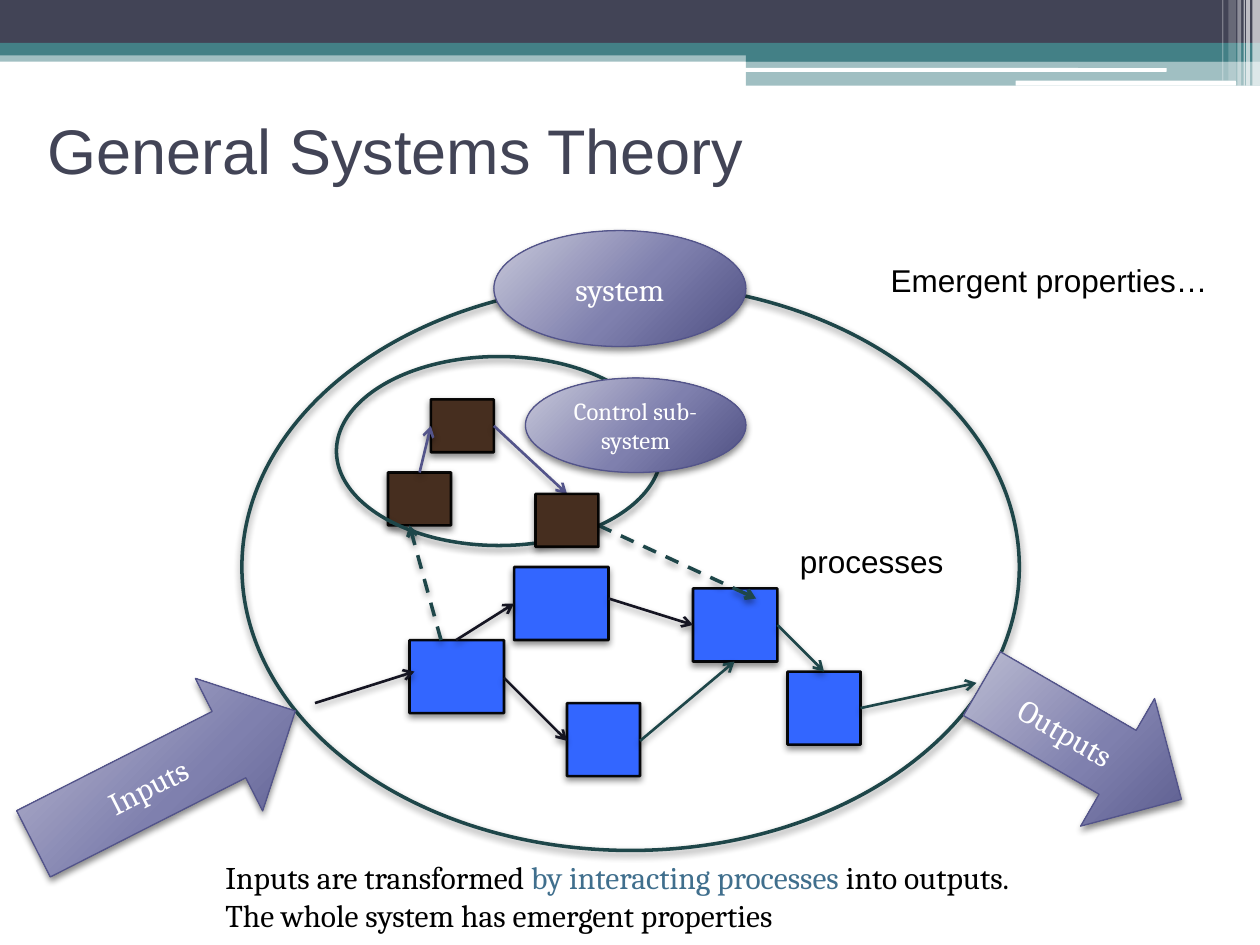
import pptx
import pptx.util
import pptx.oxml
import pptx.oxml.ns
from pptx.dml.color import RGBColor
from pptx.enum.dml import MSO_LINE
from pptx.enum.shapes import MSO_CONNECTOR, MSO_SHAPE
from pptx.enum.text import MSO_ANCHOR, MSO_AUTO_SIZE, PP_ALIGN
from pptx.util import Inches

SLATE = RGBColor(0x42, 0x44, 0x56)
TEAL = RGBColor(0x43, 0x80, 0x86)
DARK_TEAL = RGBColor(0x1E, 0x46, 0x49)
VIOLET = RGBColor(0x53, 0x54, 0x8A)
INK = RGBColor(0x15, 0x15, 0x22)
BLUE = RGBColor(0x33, 0x66, 0xFF)
BROWN = RGBColor(0x46, 0x2E, 0x1F)
STEEL = RGBColor(0x40, 0x6F, 0x8D)
BLACK = RGBColor(0, 0, 0)
WHITE = RGBColor(0xFF, 0xFF, 0xFF)

NS = pptx.oxml.ns.nsdecls("a")
GRADIENT = f"""<a:gradFill {NS} rotWithShape="1"><a:gsLst>
<a:gs pos="0"><a:srgbClr val="C9C9DA"/></a:gs>
<a:gs pos="55000"><a:srgbClr val="7F80AE"/></a:gs>
<a:gs pos="100000"><a:srgbClr val="4D4E81"/></a:gs></a:gsLst>
<a:path path="circle"><a:fillToRect l="-40000" t="-90000" r="140000" b="190000"/></a:path>
</a:gradFill>"""


def box(left, top, width, height):
    return Inches(left), Inches(top), Inches(width), Inches(height)


def write(frame, paragraphs, size=18, font="Cambria", color=BLACK, align=None, anchor=None):
    """Fill a text frame; each paragraph is a list of (text, colour or None)."""
    if anchor is not None:
        frame.vertical_anchor = anchor
    for index, parts in enumerate(paragraphs):
        paragraph = frame.paragraphs[0] if index == 0 else frame.add_paragraph()
        paragraph.alignment = align
        for text, part_color in parts:
            run = paragraph.add_run()
            run.text = text
            run.font.size = pptx.util.Pt(size)
            run.font.name = font
            run.font.color.rgb = part_color or color


def set_alpha(parent, percent):
    color = parent.find(".//" + pptx.oxml.ns.qn("a:srgbClr"))
    color.append(pptx.oxml.parse_xml(f'<a:alpha {NS} val="{percent * 1000}"/>'))


def add_shadow(properties, percent):
    properties.append(pptx.oxml.parse_xml(
        f'<a:effectLst {NS}><a:outerShdw blurRad="50800" dist="25400" dir="5400000" '
        f'rotWithShape="0"><a:srgbClr val="000000"><a:alpha val="{percent * 1000}"/>'
        '</a:srgbClr></a:outerShdw></a:effectLst>'))


class Diagram:
    """Style of the systems diagram and the slide it is drawn on."""

    def __init__(self, slide):
        self.slide = slide
        self.shapes = slide.shapes

    def title(self, text, *place):
        heading = self.shapes.title
        heading.left, heading.top, heading.width, heading.height = box(*place)
        write(heading.text_frame, [[(text, None)]], size=36, font="Arial", color=SLATE,
              align=PP_ALIGN.LEFT, anchor=MSO_ANCHOR.MIDDLE)

    def bar(self, place, color, alpha=None, kind=MSO_SHAPE.RECTANGLE):
        strip = self.shapes.add_shape(kind, *box(*place))
        strip.fill.solid()
        strip.fill.fore_color.rgb = color
        if alpha:
            set_alpha(strip._element.spPr, alpha)
        strip.line.fill.background()
        strip.shadow.inherit = False

    def outlined(self, kind, place, color, width):
        shape = self.shapes.add_shape(kind, *box(*place))
        shape.line.color.rgb = color
        shape.line.width = pptx.util.Pt(width)
        add_shadow(shape._element.spPr, 45)
        return shape

    def boundary(self, *place):
        self.outlined(MSO_SHAPE.OVAL, place, DARK_TEAL, 2).fill.background()

    def process(self, color, *place):
        step = self.outlined(MSO_SHAPE.RECTANGLE, place, BLACK, 1.5)
        step.fill.solid()
        step.fill.fore_color.rgb = color
        set_alpha(step.line._get_or_add_ln(), 95)

    def label(self, text, kind, place, size=18, rotation=0):
        badge = self.outlined(kind, place, VIOLET, 0.75)
        badge.fill.solid()
        properties = badge._element.spPr
        properties.replace(properties.find(pptx.oxml.ns.qn("a:solidFill")),
                           pptx.oxml.parse_xml(GRADIENT))
        badge.rotation = rotation
        write(badge.text_frame, [[(text, None)]], size=size, color=WHITE,
              align=PP_ALIGN.CENTER, anchor=MSO_ANCHOR.MIDDLE)

    def arrow(self, start, end, color, dashed=False):
        flow = self.shapes.add_connector(
            MSO_CONNECTOR.STRAIGHT, *(Inches(value) for value in (*start, *end)))
        flow.line.color.rgb = color
        flow.line.width = pptx.util.Pt(2 if dashed else 1.5)
        if dashed:
            flow.line.dash_style = MSO_LINE.DASH
        flow.line._get_or_add_ln().append(
            pptx.oxml.parse_xml(f'<a:tailEnd {NS} type="arrow"/>'))
        add_shadow(flow._element.spPr, 40)

    def note(self, paragraphs, place, font="Arial", wrap=True):
        frame = self.shapes.add_textbox(*box(*place)).text_frame
        frame.word_wrap = wrap
        frame.auto_size = MSO_AUTO_SIZE.SHAPE_TO_FIT_TEXT
        write(frame, paragraphs, font=font)


def main():
    deck = pptx.Presentation()
    deck.slide_width, deck.slide_height = Inches(10), Inches(7.5)
    diagram = Diagram(deck.slides.add_slide(deck.slide_layouts[5]))

    # Header bands
    diagram.bar((0, 0.4, 10, 0.09), TEAL, 50)
    diagram.bar((0, 0, 10, 0.34), SLATE)
    diagram.bar((0, 0.34, 10, 0.1), TEAL)
    diagram.bar((5.92, 0.39, 4.08, 0.1), TEAL)
    diagram.bar((5.92, 0.48, 4.08, 0.2), TEAL, 50)
    for place in ((5.91, 0.54, 3.35, 0.03), (8.06, 0.64, 1.75, 0.04)):
        diagram.bar(place, WHITE, kind=MSO_SHAPE.ROUNDED_RECTANGLE)
    for left, width, height, alpha in (
            (9.94, 0.06, 0.68, 65), (9.89, 0.03, 0.68, 65), (9.87, 0.01, 0.68, 60),
            (9.82, 0.03, 0.68, 40), (9.75, 0.06, 0.64, 20), (9.7, 0.01, 0.64, 30)):
        diagram.bar((left, 0, width, height), WHITE, alpha)

    diagram.title("General Systems Theory", 0.28, 0.6, 9, 1.17)

    # System with its inputs and outputs
    diagram.boundary(1.92, 2.25, 6.17, 4.5)
    diagram.label("system", MSO_SHAPE.OVAL, (3.92, 1.83, 2, 0.92))
    diagram.label("Inputs", MSO_SHAPE.RIGHT_ARROW, (0.14, 5.58, 2.33, 1.18), rotation=333.1)
    diagram.label("Outputs", MSO_SHAPE.RIGHT_ARROW, (7.67, 5.3, 1.83, 1.17), rotation=30.1)

    # Processes and control steps
    for left, top, width in ((4.5, 5.58, 0.58), (4.08, 4.5, 0.75), (5.5, 4.67, 0.67),
                             (6.25, 5.33, 0.58), (3.25, 5.08, 0.75)):
        diagram.process(BLUE, left, top, width, 0.58)
    for left, top in ((3.42, 3.17), (3.08, 3.75)):
        diagram.process(BROWN, left, top, 0.5, 0.42)
    diagram.boundary(2.67, 2.83, 2.58, 1.5)

    # Flows between processes
    for start, end, color in (
            ((2.5, 5.58), (3.29, 5.33), INK), ((4, 5.38), (4.5, 5.88), INK),
            ((3.62, 5.08), (4.08, 4.79), INK), ((5.08, 5.88), (5.83, 5.25), DARK_TEAL),
            ((4.83, 4.75), (5.5, 4.96), INK), ((6.17, 4.96), (6.54, 5.33), DARK_TEAL),
            ((6.83, 5.62), (7.75, 5.42), DARK_TEAL)):
        diagram.arrow(start, end, color)

    # Control sub-system
    diagram.label("Control sub-system", MSO_SHAPE.OVAL, (4.17, 3, 1.75, 0.75), size=14)
    diagram.arrow((3.5, 5.08), (3.25, 4.17), DARK_TEAL, dashed=True)
    diagram.arrow((4.75, 4.17), (6, 4.75), DARK_TEAL, dashed=True)
    diagram.arrow((3.33, 3.75), (3.42, 3.38), VIOLET)
    diagram.arrow((3.92, 3.38), (4.5, 3.92), VIOLET)
    diagram.process(BROWN, 4.25, 3.92, 0.5, 0.42)

    # Notes
    diagram.note([[("processes", None)]], (6.25, 4.25, 1.75, 0.4))
    diagram.note([[("Emergent properties…", None)]], (6.97, 2.02, 2.74, 0.4), wrap=False)
    diagram.note([[("Inputs are transformed ", None), ("by interacting processes ", STEEL),
                   ("into outputs.", None)],
                  [("The whole system has emergent properties", None)]],
                 (1.69, 6.76, 7.58, 0.71), font="Cambria")

    deck.save("out.pptx")


if __name__ == "__main__":
    main()
